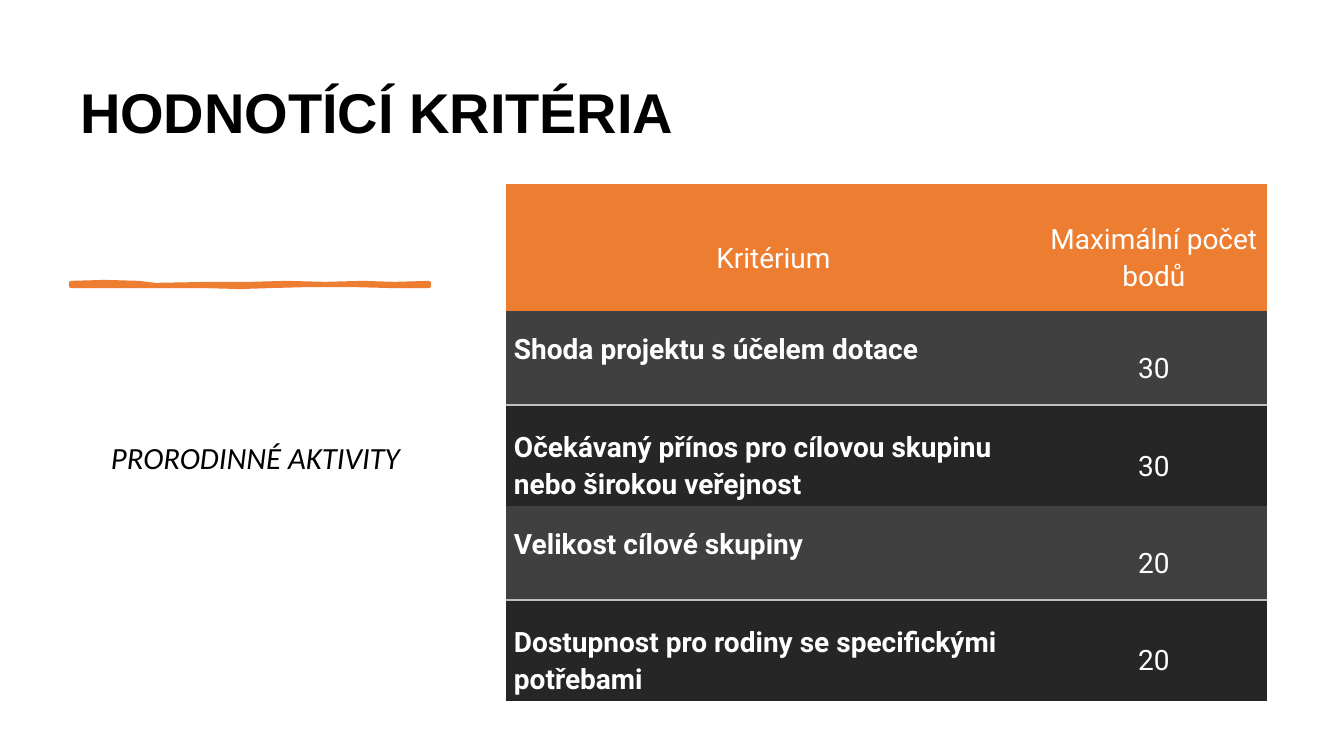
import pptx
import pptx.dml.color
import pptx.enum.text
import pptx.oxml
import pptx.oxml.ns
import pptx.util

RGBColor = pptx.dml.color.RGBColor
PP_ALIGN = pptx.enum.text.PP_ALIGN
MSO_ANCHOR = pptx.enum.text.MSO_ANCHOR

EMU_PER_PX = 914400 / 100.8
BLACK = RGBColor(0x00, 0x00, 0x00)
WHITE = RGBColor(0xFF, 0xFF, 0xFF)
ORANGE = RGBColor(0xED, 0x7D, 0x31)
GREY = RGBColor(0x40, 0x40, 0x40)
DARK = RGBColor(0x26, 0x26, 0x26)
RULE = RGBColor(0xBF, 0xBF, 0xBF)

HEADER = ("Kritérium", "Maximální počet bodů")
CRITERIA = [
    ("Shoda projektu s účelem dotace", "30"),
    ("Očekávaný přínos pro cílovou skupinu nebo širokou veřejnost", "30"),
    ("Velikost cílové skupiny", "20"),
    ("Dostupnost pro rodiny se specifickými potřebami", "20"),
]
COLUMN_WIDTHS = (535, 226)
HEADER_HEIGHT, SHORT_ROW, TALL_ROW = 127, 94, 101
BRUSH_OUTLINE = [
    (71, 283), (105, 282), (139, 283), (155, 285), (211, 284), (250, 284),
    (286, 283), (325, 284), (362, 283), (395, 284), (429, 283),
    (429, 286), (390, 286), (351, 285), (310, 285), (272, 286), (240, 287),
    (201, 286), (140, 286), (71, 286),
]


def px(length):
    return pptx.util.Emu(round(length * EMU_PER_PX))


def style_paragraph(paragraph, font_name, size, color, spacing,
                    align=PP_ALIGN.LEFT, bold=False, italic=False):
    paragraph.alignment = align
    paragraph.line_spacing = spacing
    font = paragraph.font
    font.name, font.size = font_name, pptx.util.Pt(size)
    font.bold, font.italic = bold, italic
    font.color.rgb = color


def add_title(slide, text):
    title = slide.shapes.title
    title.left, title.top, title.width, title.height = map(px, (70, 71, 649, 80))
    frame = title.text_frame
    frame.text = text
    frame.vertical_anchor = MSO_ANCHOR.BOTTOM
    style_paragraph(frame.paragraphs[0], "Arial", 40, BLACK, 0.9, bold=True)


def add_brush_stroke(slide, outline):
    builder = slide.shapes.build_freeform(*outline[0], scale=EMU_PER_PX)
    builder.add_line_segments(outline[1:], close=True)
    stroke = builder.convert_to_shape()
    stroke.shadow.inherit = False
    stroke.fill.solid()
    stroke.fill.fore_color.rgb = ORANGE
    stroke.line.color.rgb = ORANGE
    stroke.line.width = pptx.util.Pt(3)


def add_topic(slide, text):
    box = slide.shapes.add_textbox(px(70), px(309), px(378), px(376))
    frame = box.text_frame
    frame.word_wrap = True
    frame.margin_left, frame.margin_top = px(41), px(134)
    frame.text = text
    style_paragraph(frame.paragraphs[0], "Calibri", 22, BLACK, 0.9, italic=True)


def set_borders(cell, ruled_side):
    properties = cell._tc.get_or_add_tcPr()
    for index, side in enumerate("LRTB"):
        paint = "<a:noFill/>"
        if side == ruled_side:
            paint = f'<a:solidFill><a:srgbClr val="{RULE}"/></a:solidFill>'
        properties.insert(index, pptx.oxml.parse_xml(
            f'<a:ln{side} {pptx.oxml.ns.nsdecls("a")} w="12700">{paint}</a:ln{side}>'))


def fill_cell(cell, text, color, align, bold=False, bottom=0, ruled_side=None):
    cell.fill.solid()
    cell.fill.fore_color.rgb = color
    cell.vertical_anchor = MSO_ANCHOR.MIDDLE
    cell.margin_left = cell.margin_right = px(8)
    cell.margin_top, cell.margin_bottom = px(17), px(bottom)
    cell.text = text
    style_paragraph(cell.text_frame.paragraphs[0], "Roboto", 20, WHITE, 1.15,
                    align, bold)
    set_borders(cell, ruled_side)


def add_criteria_table(slide):
    heights = [HEADER_HEIGHT] + [SHORT_ROW, TALL_ROW] * 2
    frame = slide.shapes.add_table(len(heights), len(COLUMN_WIDTHS), px(506), px(184),
                                   px(sum(COLUMN_WIDTHS)), px(sum(heights)))
    table = frame.table
    table.horz_banding = False
    for column, width in zip(table.columns, COLUMN_WIDTHS):
        column.width = px(width)
    for row, height in zip(table.rows, heights):
        row.height = px(height)

    for column, text in enumerate(HEADER):
        fill_cell(table.cell(0, column), text, ORANGE, PP_ALIGN.CENTER)

    # Rows come in pairs, a short grey one and a tall dark one, with a rule between
    for row, (criterion, points) in enumerate(CRITERIA, start=1):
        short = row % 2 == 1
        color, side = (GREY, "B") if short else (DARK, "T")
        fill_cell(table.cell(row, 0), criterion, color, PP_ALIGN.LEFT, bold=True,
                  bottom=38 if short else 0, ruled_side=side)
        fill_cell(table.cell(row, 1), points, color, PP_ALIGN.CENTER, ruled_side=side)


def main():
    presentation = pptx.Presentation()
    presentation.slide_width, presentation.slide_height = px(1344), px(756)
    slide = presentation.slides.add_slide(presentation.slide_layouts[5])

    # Heading and left column
    add_title(slide, "HODNOTÍCÍ KRITÉRIA")
    add_brush_stroke(slide, BRUSH_OUTLINE)
    add_topic(slide, "PRORODINNÉ AKTIVITY")

    # Scoring table
    add_criteria_table(slide)

    presentation.save("out.pptx")


if __name__ == "__main__":
    main()
